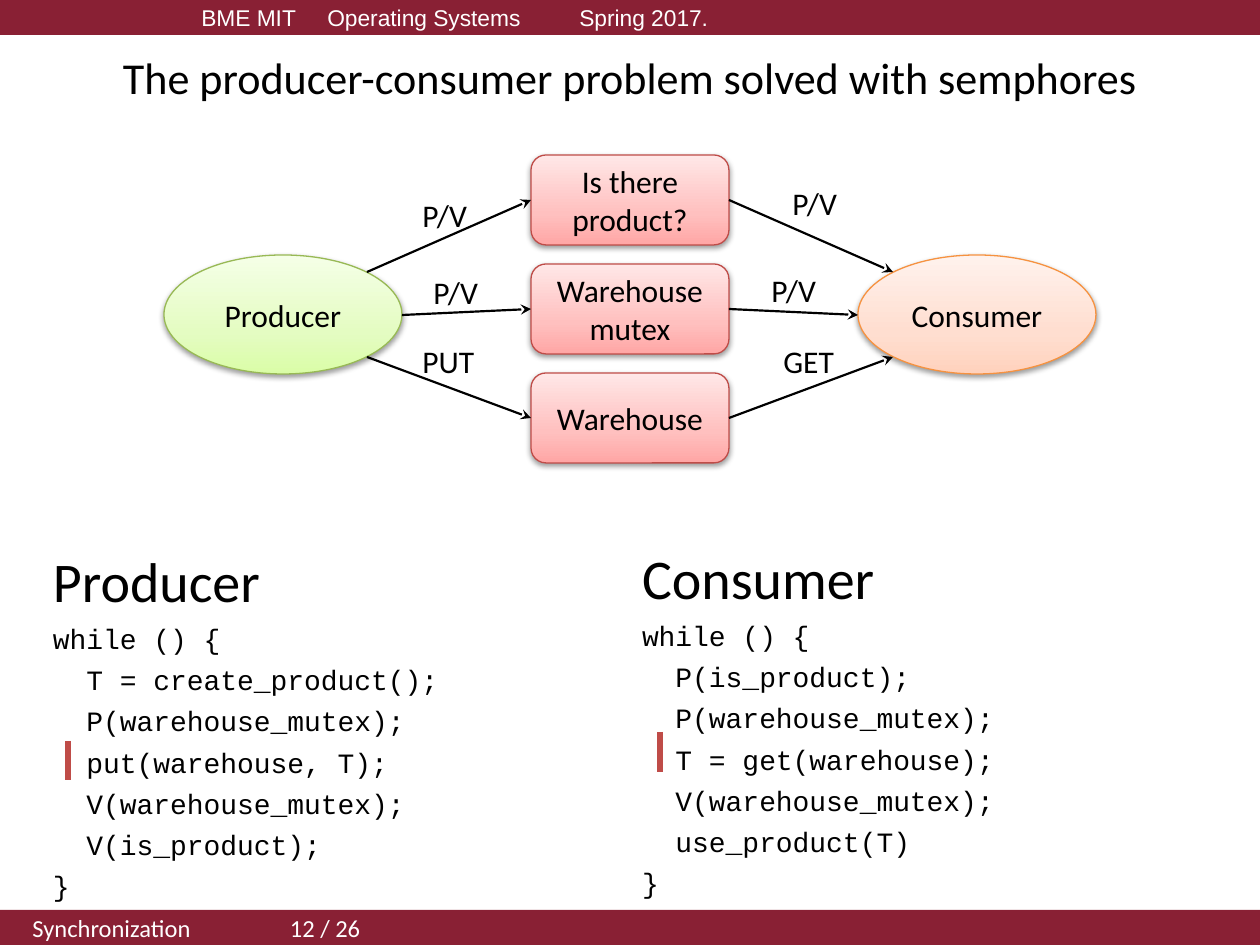
"""Build the slide on the producer-consumer problem solved with semaphores."""
import copy

import pptx
import pptx.dml.color
import pptx.enum.shapes
import pptx.enum.text
import pptx.oxml
import pptx.oxml.ns
import pptx.util

PX = 914400 / 126
NAMESPACE = pptx.oxml.ns.nsdecls("a")
SHAPES = pptx.enum.shapes.MSO_SHAPE
ALIGN = pptx.enum.text.PP_ALIGN
ANCHOR = pptx.enum.text.MSO_ANCHOR
COLORS = {
    "band": "892034", "white": "FFFFFF", "black": "000000", "mark": "BF4C48",
    "green": ("DAFDA7", "E4FCC2", "F5FFE7"), "green line": "98B955",
    "orange": ("FFD2BD", "FFDED0", "FFF2ED"), "orange line": "F69240",
    "red": ("FFA6A5", "FFC0BF", "FFE7E7"), "red line": "BF4C48",
}


def rgb(name):
    return pptx.dml.color.RGBColor.from_string(COLORS.get(name, name))


def write(paragraph, text, size=18, font="Calibri", color="black", align=ALIGN.LEFT, before=0):
    paragraph.text = text
    paragraph.alignment = align
    paragraph.space_before = pptx.util.Pt(before)
    paragraph.font.size = pptx.util.Pt(size)
    paragraph.font.name = font
    paragraph.font.color.rgb = rgb(color)


presentation = pptx.Presentation()
presentation.slide_width = round(1260 * PX)
presentation.slide_height = round(945 * PX)
slide = presentation.slides.add_slide(presentation.slide_layouts[5])

bands = [
    (0, 189, "BME MIT\tOperating Systems\tSpring 2017.", 13, "Arial"),
    (910, 20, "Synchronization\t\t 12 / 26", 14, "Calibri"),
]
for top, indent, text, size, font in bands:
    band = slide.shapes.add_shape(SHAPES.RECTANGLE, 0, round(top * PX), round(1260 * PX), round(35 * PX))
    band.shadow.inherit = False
    band.fill.solid()
    band.fill.fore_color.rgb = rgb("band")
    band.line.fill.background()
    band.text_frame.vertical_anchor = ANCHOR.MIDDLE
    paragraph = band.text_frame.paragraphs[0]
    paragraph._p.get_or_add_pPr().set("marL", str(round(indent * PX)))
    write(paragraph, text, size=size, font=font, color="white")

title = slide.shapes.title
title.left, title.top, title.width, title.height = [round(value * PX) for value in (63, 38, 1134, 77)]
title.text_frame.auto_size = pptx.enum.text.MSO_AUTO_SIZE.NONE
title.text_frame.vertical_anchor = ANCHOR.MIDDLE
write(title.text_frame.paragraphs[0], "The producer-consumer problem solved with semphores",
      size=25.2, align=ALIGN.CENTER)

nodes = [
    ("Producer", SHAPES.OVAL, 164, 255, 238, 119, "green"),
    ("Consumer", SHAPES.OVAL, 858, 255, 238, 119, "orange"),
]
for row, text in enumerate(["Is there product?", "Warehouse mutex", "Warehouse"]):
    nodes.append((text, SHAPES.ROUNDED_RECTANGLE, 531, 155 + row * 109, 198, 90, "red"))
for text, kind, left, top, width, height, color in nodes:
    node = slide.shapes.add_shape(kind, *[round(value * PX) for value in (left, top, width, height)])
    node.fill.gradient()
    node.fill.gradient_angle = 90
    first_stop = node.fill._xPr.find(".//" + pptx.oxml.ns.qn("a:gs"))
    first_stop.addnext(copy.deepcopy(first_stop))
    for stop, position, stop_color in zip(node.fill.gradient_stops, (0, 0.35, 1), COLORS[color]):
        stop.position = position
        stop.color.rgb = rgb(stop_color)
    node.line.color.rgb = rgb(color + " line")
    node.line.width = pptx.util.Pt(0.75)
    node.shadow.inherit = False
    effects = node._element.spPr.find(pptx.oxml.ns.qn("a:effectLst"))
    effects.append(pptx.oxml.parse_xml(
        f'<a:outerShdw {NAMESPACE} blurRad="40000" dist="20000" dir="5400000" rotWithShape="0">'
        '<a:srgbClr val="000000"><a:alpha val="38000"/></a:srgbClr></a:outerShdw>'))
    node.text_frame.word_wrap = True
    node.text_frame.vertical_anchor = ANCHOR.MIDDLE
    write(node.text_frame.paragraphs[0], text, align=ALIGN.CENTER)

lines = [(68, 741, 68, 780, "mark", 3, False), (660, 732, 660, 772, "mark", 3, False)]
for row, (inset, outer_y) in enumerate([(367, 272), (402, 315), (367, 357)]):
    box_y = 200 + row * 109
    lines.append((inset, outer_y, 531, box_y, "black", 1.25, True))
    lines.append((729, box_y, 1260 - inset, outer_y, "black", 1.25, True))
for x1, y1, x2, y2, color, width, arrow in lines:
    connector = slide.shapes.add_connector(
        pptx.enum.shapes.MSO_CONNECTOR.STRAIGHT, *[round(value * PX) for value in (x1, y1, x2, y2)])
    connector.line.color.rgb = rgb(color)
    connector.line.width = pptx.util.Pt(width)
    if arrow:
        connector.line._get_or_add_ln().append(pptx.oxml.parse_xml(f'<a:tailEnd {NAMESPACE} type="stealth"/>'))
    connector._element.spPr.append(pptx.oxml.parse_xml(f"<a:effectLst {NAMESPACE}/>"))

labels = [
    ("P/V", 410, 190, 71), ("P/V", 421, 267, 71), ("PUT", 410, 336, 78),
    ("P/V", 780, 178, 71), ("P/V", 759, 265, 71), ("GET", 771, 336, 77),
]
for text, left, top, width in labels:
    label = slide.shapes.add_textbox(*[round(value * PX) for value in (left, top, width, 50)])
    label.text_frame.word_wrap = False
    write(label.text_frame.paragraphs[0], text)

listings = [
    ("Producer", 53, 547, [
        "while () {", "  T = create_product();", "  P(warehouse_mutex);", "  put(warehouse, T);",
        "  V(warehouse_mutex);", "  V(is_product);", "}"]),
    ("Consumer", 642, 544, [
        "while () {", "  P(is_product);", "  P(warehouse_mutex);", "  T = get(warehouse);",
        "  V(warehouse_mutex);", "  use_product(T)", "}"]),
]
for heading, left, top, code in listings:
    listing = slide.shapes.add_textbox(*[round(value * PX) for value in (left, top, 560, 350)])
    frame = listing.text_frame
    frame.word_wrap = True
    frame.margin_left = frame.margin_top = frame.margin_right = frame.margin_bottom = 0
    write(frame.paragraphs[0], heading, size=32)
    for code_line in code:
        write(frame.add_paragraph(), code_line, size=16, font="Courier New", before=4.3)

presentation.save("out.pptx")
